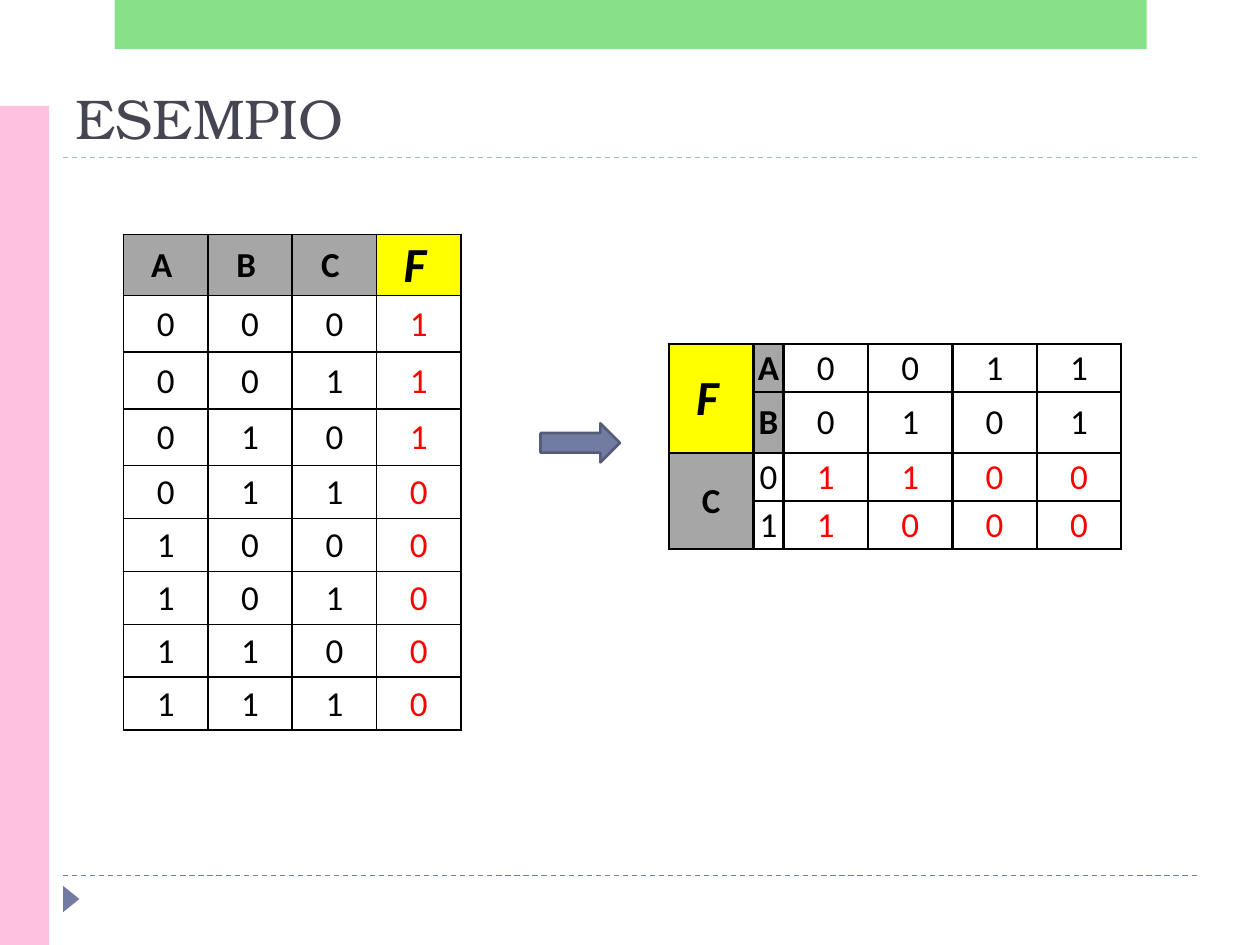
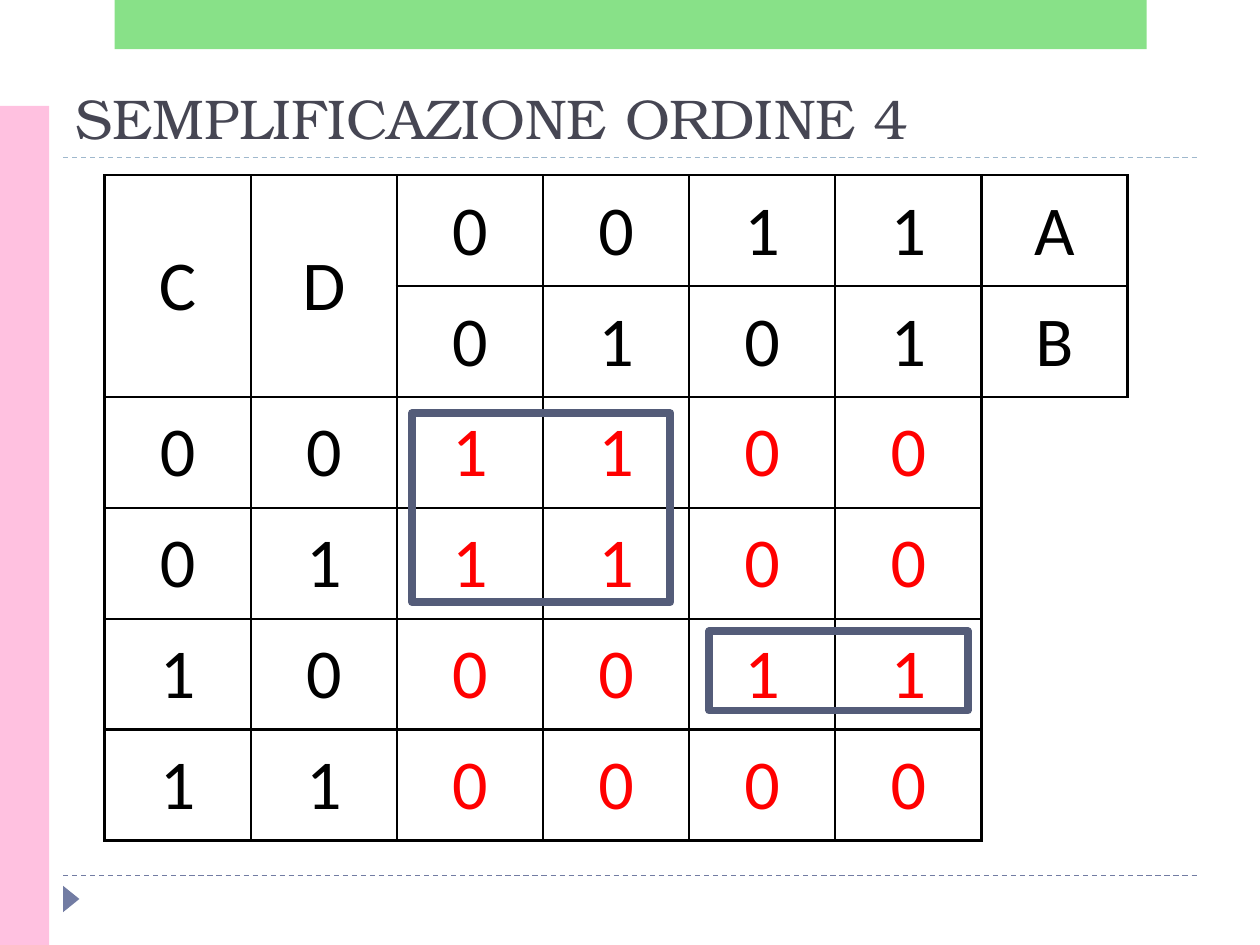
import dataclasses
import typing

import lxml.etree
import pptx
import pptx.dml.color
import pptx.enum.dml
import pptx.enum.shapes
import pptx.enum.text
import pptx.oxml.ns
import pptx.util

Inches = pptx.util.Inches
ShapeType = pptx.enum.shapes.MSO_SHAPE

TITLE_FONT = "TeX Gyre Bonum"
TABLE_FONT = "Calibri"
BLACK = "000000"
RED = "FF0000"
GRAY = "A6A6A6"
YELLOW = "FFFF00"
INK = "464653"
SLATE = "727CA3"
DARK_SLATE = "545C79"
PALE_BLUE = "9FB8CD"
PINK = "FFC1E0"
GREEN = "88E188"


@dataclasses.dataclass(frozen=True)
class Block:
    kind: ShapeType
    left: float
    top: float
    width: float
    height: float
    fill: str | None = None
    line: str | None = None
    line_points: float = 0
    rotation: float = 0


@dataclasses.dataclass(frozen=True)
class Rule:
    top: float
    color: str


@dataclasses.dataclass(frozen=True)
class CellStyle:
    size: float
    color: str = BLACK
    bold: bool = False
    italic: bool = False
    fill: str | None = None
    suffix: str = ""
    suffix_size: float = 20
    edges: str = "LRTB"


@dataclasses.dataclass(frozen=True)
class Grid:
    left: float
    top: float
    columns: list[float]
    rows: list[float]
    border_points: float
    texts: list[list[str]]
    style_codes: list[str]
    styles: dict[str, CellStyle]
    merges: list[tuple[int, int, int, int]] = dataclasses.field(default_factory=list)


BLOCKS = [
    Block(ShapeType.ISOSCELES_TRIANGLE, 0.46, 7.07, 0.21, 0.13, SLATE, rotation=90),
    Block(ShapeType.RECTANGLE, 0, 0.84, 0.39, 6.66, PINK),
    Block(ShapeType.RECTANGLE, 0.91, 0, 8.19, 0.39, GREEN),
]
RULES = [Rule(6.95, SLATE), Rule(1.25, PALE_BLUE)]

SMALL_STYLES = {
    "h": CellStyle(20, bold=True, fill=GRAY),
    "f": CellStyle(28, bold=True, italic=True, fill=YELLOW, suffix=" "),
    "n": CellStyle(20),
    "r": CellStyle(20, RED),
}
LARGE_STYLES = {
    "n": CellStyle(40),
    "r": CellStyle(40, RED),
    "t": CellStyle(40, edges="LT"),
    "e": CellStyle(40, edges="L"),
}

TRUTH_TABLE = Grid(
    0.98, 1.86, [0.67] * 4, [0.45] * 4 + [0.42] * 5, 1,
    [["A ", "B ", "C ", "F"]]
    + [list(digits) for digits in
       ("0001", "0011", "0101", "0110", "1000", "1010", "1100", "1110")],
    ["hhhf"] + ["nnnr"] * 8,
    SMALL_STYLES,
)
THREE_VARIABLE_MAP = Grid(
    5.31, 2.73, [0.67, 0.24] + [0.67] * 4, [0.38] * 4, 1.5,
    [list(row) for row in ("FA0011", " B0101", "C01100", " 11000")],
    ["fhnnnn", "fhnnnn", "hnrrrr", "hnrrrr"],
    SMALL_STYLES,
    [(0, 0, 1, 0), (2, 0, 3, 0)],
)
FOUR_VARIABLE_MAP = Grid(
    0.83, 1.39, [1.16] * 7, [0.88] * 6, 1.5,
    [list(row) for row in
     ("CD0011A", "  0101B", "001100 ", "011100 ", "100011 ", "110000 ")],
    ["nnnnnnn"] * 2 + ["nnrrrrt"] + ["nnrrrre"] * 3,
    LARGE_STYLES,
    [(0, 0, 1, 0), (0, 1, 1, 1)],
)
ARROW = Block(ShapeType.RIGHT_ARROW, 4.29, 3.36, 0.63, 0.31, SLATE, DARK_SLATE, 1.5)
GROUPINGS = [
    Block(ShapeType.RECTANGLE, 3.27, 3.28, 2.05, 1.5, None, DARK_SLATE, 4.5),
    Block(ShapeType.RECTANGLE, 5.63, 5.01, 2.05, 0.63, None, DARK_SLATE, 4.5),
]


def rgb(color: str) -> pptx.dml.color.RGBColor:
    return pptx.dml.color.RGBColor.from_string(color)


def apply_fill(fill: typing.Any, color: str | None) -> None:
    if color is None:
        fill.background()
    else:
        fill.solid()
        fill.fore_color.rgb = rgb(color)


def add_run(paragraph: typing.Any, text: str, font: str, size: float, color: str,
            bold: bool = False, italic: bool = False) -> None:
    run = paragraph.add_run()
    run.text = text
    run.font.name = font
    run.font.size = pptx.util.Pt(size)
    run.font.color.rgb = rgb(color)
    run.font.bold = bold
    run.font.italic = italic


def add_block(slide: typing.Any, block: Block) -> None:
    shape = slide.shapes.add_shape(
        block.kind, Inches(block.left), Inches(block.top),
        Inches(block.width), Inches(block.height))
    shape.shadow.inherit = False
    shape.rotation = block.rotation
    apply_fill(shape.fill, block.fill)
    apply_fill(shape.line.fill, block.line)
    if block.line:
        shape.line.width = pptx.util.Pt(block.line_points)


def add_rule(slide: typing.Any, rule: Rule) -> None:
    connector = slide.shapes.add_connector(
        pptx.enum.shapes.MSO_CONNECTOR.STRAIGHT,
        Inches(0.5), Inches(rule.top), Inches(9.5), Inches(rule.top))
    connector.line.color.rgb = rgb(rule.color)
    connector.line.width = pptx.util.Pt(0.75)
    connector.line.dash_style = pptx.enum.dml.MSO_LINE.DASH
    properties = connector._element.spPr
    lxml.etree.SubElement(properties, pptx.oxml.ns.qn("a:effectLst"))


def set_borders(cell: typing.Any, points: float, edges: str) -> None:
    properties = cell._tc.get_or_add_tcPr()
    for position, edge in enumerate("LRTB"):
        line = lxml.etree.Element(pptx.oxml.ns.qn(f"a:ln{edge}"))
        if edge in edges:
            line.set("w", str(pptx.util.Pt(points)))
            fill = lxml.etree.SubElement(line, pptx.oxml.ns.qn("a:solidFill"))
            lxml.etree.SubElement(fill, pptx.oxml.ns.qn("a:srgbClr"), val=BLACK)
        else:
            lxml.etree.SubElement(line, pptx.oxml.ns.qn("a:noFill"))
        properties.insert(position, line)


def format_cell(cell: typing.Any, text: str, style: CellStyle, border_points: float) -> None:
    cell.margin_left = cell.margin_right = cell.margin_top = Inches(0.01)
    cell.margin_bottom = Inches(0)
    cell.vertical_anchor = pptx.enum.text.MSO_ANCHOR.MIDDLE
    apply_fill(cell.fill, style.fill)
    set_borders(cell, border_points, style.edges)
    if text.strip():
        paragraph = cell.text_frame.paragraphs[0]
        paragraph.alignment = pptx.enum.text.PP_ALIGN.CENTER
        add_run(paragraph, text, TABLE_FONT, style.size, style.color, style.bold, style.italic)
        if style.suffix:
            add_run(paragraph, style.suffix, TABLE_FONT, style.suffix_size, style.color, style.bold)


def add_grid(slide: typing.Any, grid: Grid) -> None:
    table = slide.shapes.add_table(
        len(grid.rows), len(grid.columns), Inches(grid.left), Inches(grid.top),
        Inches(sum(grid.columns)), Inches(sum(grid.rows))).table
    table.first_row = False
    table.horz_banding = False
    for column, width in zip(table.columns, grid.columns):
        column.width = Inches(width)
    for row, height in zip(table.rows, grid.rows):
        row.height = Inches(height)
    for top, left, bottom, right in grid.merges:
        table.cell(top, left).merge(table.cell(bottom, right))
    for row_index, (texts, codes) in enumerate(zip(grid.texts, grid.style_codes)):
        for column_index, (text, code) in enumerate(zip(texts, codes)):
            format_cell(table.cell(row_index, column_index), text,
                        grid.styles[code], grid.border_points)


def add_titled_slide(presentation: typing.Any, title_text: str) -> typing.Any:
    slide = presentation.slides.add_slide(presentation.slide_layouts[5])
    for rule in RULES:
        add_rule(slide, rule)
    for block in BLOCKS:
        add_block(slide, block)
    title = slide.shapes.title
    title.left, title.top = Inches(0.5), Inches(0.55)
    title.width, title.height = Inches(9), Inches(0.7)
    frame = title.text_frame
    frame.word_wrap = True
    frame.auto_size = pptx.enum.text.MSO_AUTO_SIZE.NONE
    frame.vertical_anchor = pptx.enum.text.MSO_ANCHOR.BOTTOM
    paragraph = frame.paragraphs[0]
    paragraph.alignment = pptx.enum.text.PP_ALIGN.LEFT
    add_run(paragraph, title_text, TITLE_FONT, 32, INK)
    return slide


def main() -> None:
    presentation = pptx.Presentation()
    presentation.slide_width = Inches(10)
    presentation.slide_height = Inches(7.5)

    example = add_titled_slide(presentation, "ESEMPIO")
    add_block(example, ARROW)
    add_grid(example, TRUTH_TABLE)
    add_grid(example, THREE_VARIABLE_MAP)

    simplification = add_titled_slide(presentation, "SEMPLIFICAZIONE ORDINE 4")
    add_grid(simplification, FOUR_VARIABLE_MAP)
    for grouping in GROUPINGS:
        add_block(simplification, grouping)

    presentation.save("out.pptx")


if __name__ == "__main__":
    main()
